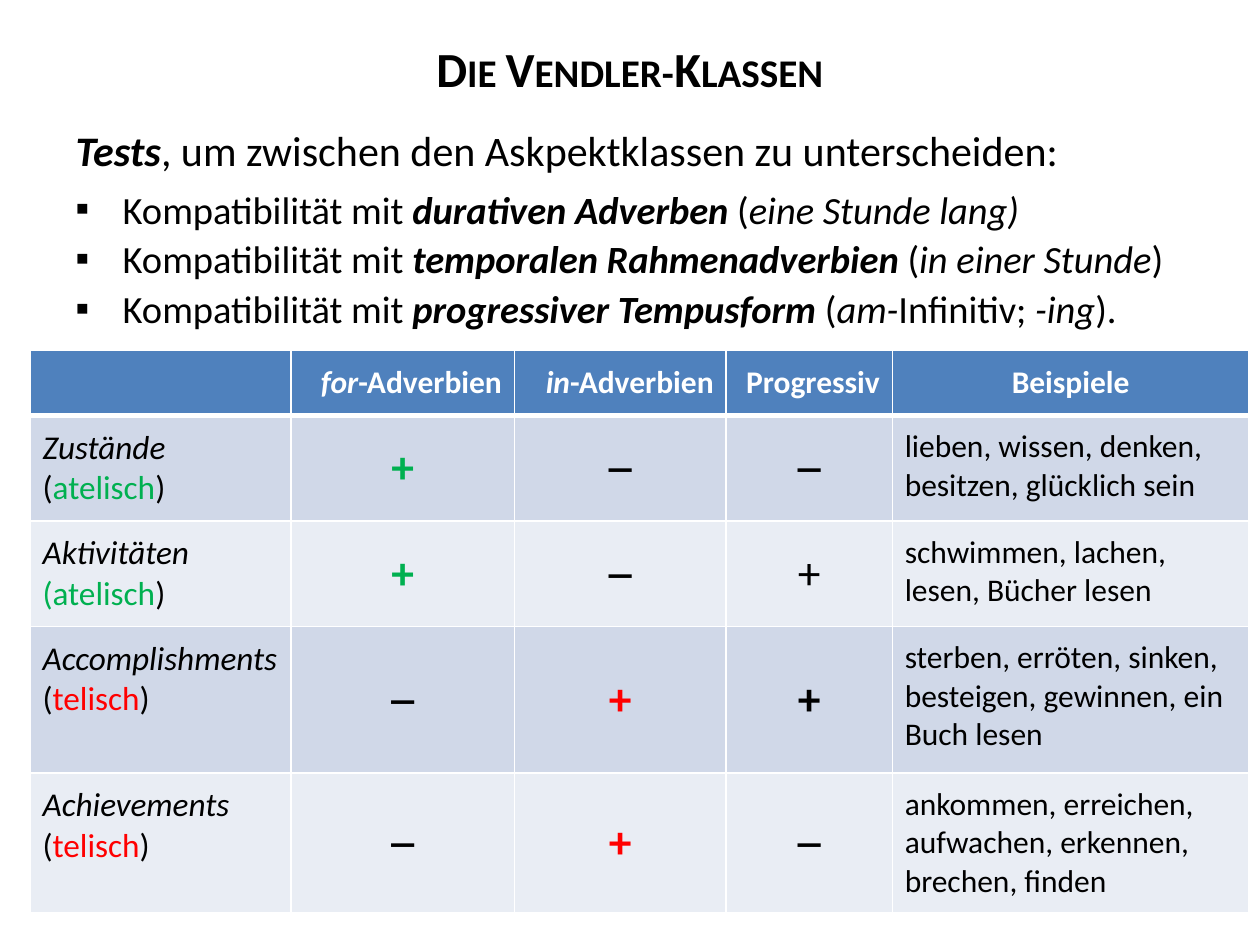
from lxml.etree import SubElement
from pptx import Presentation
from pptx.dml.color import RGBColor
from pptx.enum.text import MSO_ANCHOR as Anchor, MSO_AUTO_SIZE as AutoSize, PP_ALIGN as Align
from pptx.oxml.ns import qn
from pptx.util import Cm, Pt

FONT = "Calibri"
COLORS = {
    "text": "000000",
    "white": "FFFFFF",
    "header": "4F81BD",
    "odd": "D0D8E8",
    "even": "E9EDF4",
    "green": "00B050",
    "red": "FF0000",
}
TITLE = "Die Vendler-Klassen"
INTRO = [("Tests", "bi"), (", um zwischen den Askpektklassen zu unterscheiden:", "")]
TESTS = [
    [("durativen Adverben ", "bi"), ("(", ""), ("eine Stunde lang)", "i")],
    [("temporalen Rahmenadverbien ", "bi"), ("(", ""), ("in einer Stunde", "i"), (")", "")],
    [("progressiver Tempusform", "bi"), (" (", ""), ("am-", "i"), ("Infinitiv; ", ""),
     ("-ing", "i"), (").", "")],
]
HEADINGS = [
    ([], Align.LEFT),
    ([("for", "bi"), ("-Adverbien", "b")], Align.RIGHT),
    ([("in", "bi"), ("-Adverbien", "b")], Align.RIGHT),
    ([("Progressiv", "b")], Align.RIGHT),
    ([("Beispiele", "b")], Align.CENTER),
]
PLUS, MINUS = "+", "─"
ATELIC = [("(", ""), ("atelisch", "", "green"), (")", "")]
ATELIC_GREEN = [("(atelisch", "", "green"), (")", "")]
TELIC = [("(", ""), ("telisch", "", "red"), (")", "")]
CLASSES = [
    ("Zustände", ATELIC, [(PLUS, "b", "green"), (MINUS, "b"), (MINUS, "b")],
     "lieben, wissen, denken, besitzen, glücklich sein"),
    ("Aktivitäten", ATELIC_GREEN, [(PLUS, "b", "green"), (MINUS, "b"), (PLUS, "")],
     "schwimmen, lachen, lesen, Bücher lesen"),
    ("Accomplishments", TELIC, [(MINUS, "b"), (PLUS, "b", "red"), (PLUS, "b")],
     "sterben, erröten, sinken, besteigen, gewinnen, ein Buch lesen"),
    ("Achievements", TELIC, [(MINUS, "b"), (PLUS, "b", "red"), (MINUS, "b")],
     "ankommen, erreichen, aufwachen, erkennen, brechen, finden"),
]
COLUMN_WIDTHS = [5.26, 4.5, 4.27, 3.35, 7.19]
ROW_HEIGHTS = [1.3, 2.13, 2.13, 2.95, 2.82]


def rgb(name):
    """Return the named colour."""
    return RGBColor.from_string(COLORS[name])


def write_runs(paragraph, parts, size, color="text"):
    """Add runs given as (text, style letters, optional colour)."""
    for text, style, *own_color in parts:
        run = paragraph.add_run()
        run.text = text
        run.font.name = FONT
        run.font.size = Pt(size)
        run.font.bold = "b" in style
        run.font.italic = "i" in style
        run.font.color.rgb = rgb(own_color[0] if own_color else color)


def place(shape, left, top, width, height):
    """Move and size a shape, in centimetres."""
    shape.left, shape.top = Cm(left), Cm(top)
    shape.width, shape.height = Cm(width), Cm(height)


def set_bullet(paragraph, character=None, indent=0.0):
    """Give a paragraph a hanging bullet, or none."""
    properties = paragraph._p.get_or_add_pPr()
    properties.set("marL", str(Cm(indent)))
    properties.set("indent", str(-Cm(indent)))
    if character:
        SubElement(properties, qn("a:buFont"), typeface=FONT)
        SubElement(properties, qn("a:buChar"), char=character)
    else:
        SubElement(properties, qn("a:buNone"))


def fill_title(shape):
    """Write the title in small capitals."""
    place(shape, 1.27, 0.43, 22.86, 1.88)
    frame = shape.text_frame
    frame.auto_size = AutoSize.NONE
    frame.vertical_anchor = Anchor.MIDDLE
    paragraph = frame.paragraphs[0]
    paragraph.alignment = Align.CENTER
    write_runs(paragraph, [(TITLE, "b")], 28)
    paragraph.runs[0].font._element.set("cap", "small")


def fill_body(shape):
    """Write the introduction and the list of tests."""
    place(shape, 1.27, 2.39, 23.57, 15.47)
    frame = shape.text_frame
    frame.auto_size = AutoSize.NONE
    intro = frame.paragraphs[0]
    intro.space_before = Pt(2)
    set_bullet(intro)
    write_runs(intro, INTRO, 24)
    for index, parts in enumerate(TESTS):
        paragraph = frame.add_paragraph()
        paragraph.space_before = Pt(2 if index else 6)
        set_bullet(paragraph, "▪", 0.95)
        write_runs(paragraph, [("Kompatibilität mit ", ""), *parts], 22)


def style_cell(cell, fill, top=1, bottom=1):
    """Set margins, white borders and fill of a cell."""
    cell.margin_left = cell.margin_right = cell.margin_top = cell.margin_bottom = Cm(0.25)
    properties = cell._tc.get_or_add_tcPr()
    for side, width in (("L", 1), ("R", 1), ("T", top), ("B", bottom)):
        line = SubElement(properties, qn(f"a:ln{side}"), w=str(Pt(width)))
        line_fill = SubElement(line, qn("a:solidFill"))
        SubElement(line_fill, qn("a:srgbClr"), val=COLORS["white"])
    cell.fill.solid()
    cell.fill.fore_color.rgb = rgb(fill)


def write_cell(cell, lines, size, color="text", alignment=Align.LEFT, anchor=Anchor.TOP):
    """Write one paragraph for each line of runs."""
    cell.vertical_anchor = anchor
    frame = cell.text_frame
    for index, parts in enumerate(lines):
        paragraph = frame.add_paragraph() if index else frame.paragraphs[0]
        paragraph.alignment = alignment
        write_runs(paragraph, parts, size, color)


def add_class_table(slide):
    """Add the table of aspect classes and test results."""
    frame = slide.shapes.add_table(
        len(ROW_HEIGHTS), len(COLUMN_WIDTHS), Cm(0.61), Cm(7.07),
        Cm(sum(COLUMN_WIDTHS)), Cm(sum(ROW_HEIGHTS)))
    table = frame.table
    for column, width in zip(table.columns, COLUMN_WIDTHS):
        column.width = Cm(width)
    for row, height in zip(table.rows, ROW_HEIGHTS):
        row.height = Cm(height)
    for cell, (parts, alignment) in zip(table.rows[0].cells, HEADINGS):
        style_cell(cell, "header", bottom=3)
        write_cell(cell, [parts], 18, "white", alignment)
    for number, (name, telicity, results, examples) in enumerate(CLASSES, 1):
        cells = list(table.rows[number].cells)
        for cell in cells:
            style_cell(cell, "odd" if number % 2 else "even", top=3 if number == 1 else 1)
        write_cell(cells[0], [[(name, "i")], telicity], 19)
        for cell, result in zip(cells[1:4], results):
            write_cell(cell, [[result]], 26, alignment=Align.CENTER, anchor=Anchor.MIDDLE)
        write_cell(cells[4], [[(examples, "")]], 18)


def main():
    """Build and save the presentation."""
    presentation = Presentation()
    presentation.slide_width, presentation.slide_height = Cm(25.4), Cm(19.05)
    slide = presentation.slides.add_slide(presentation.slide_layouts[1])
    fill_title(slide.shapes.title)
    fill_body(slide.placeholders[1])
    add_class_table(slide)
    presentation.save("out.pptx")


if __name__ == "__main__":
    main()
